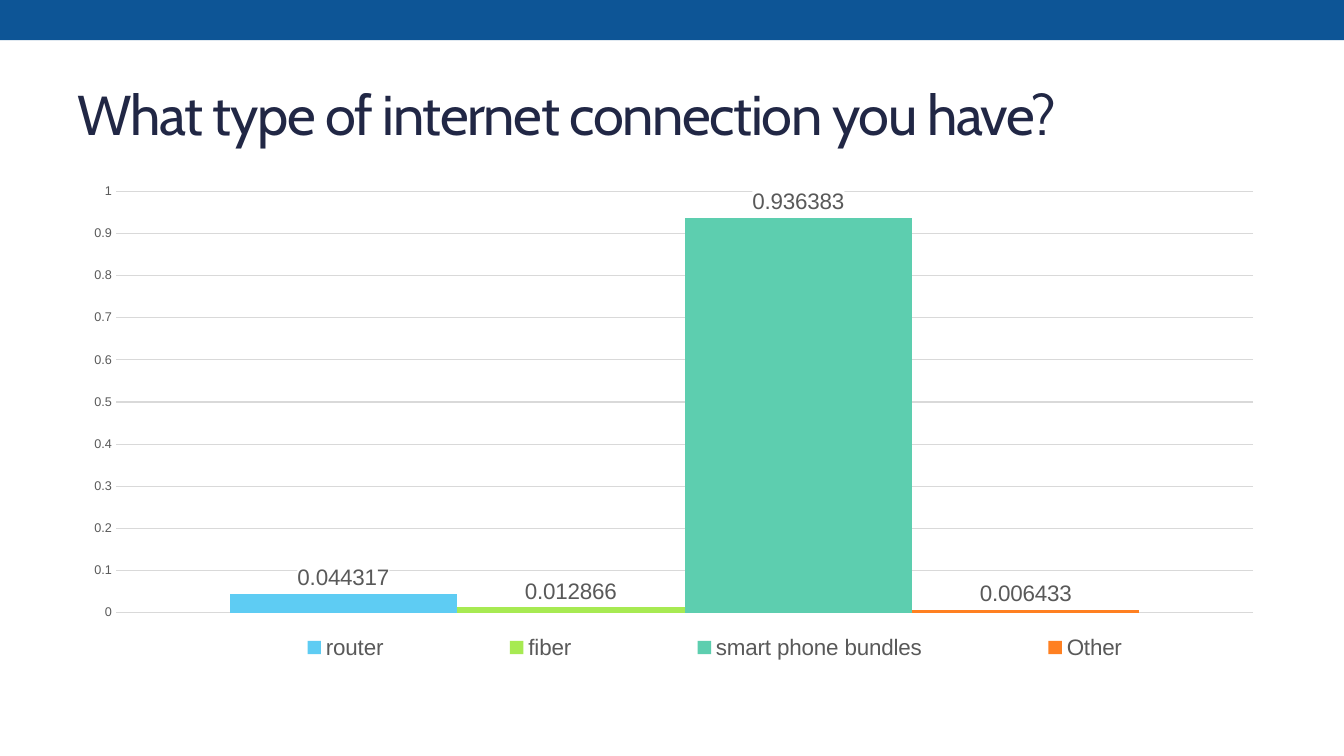
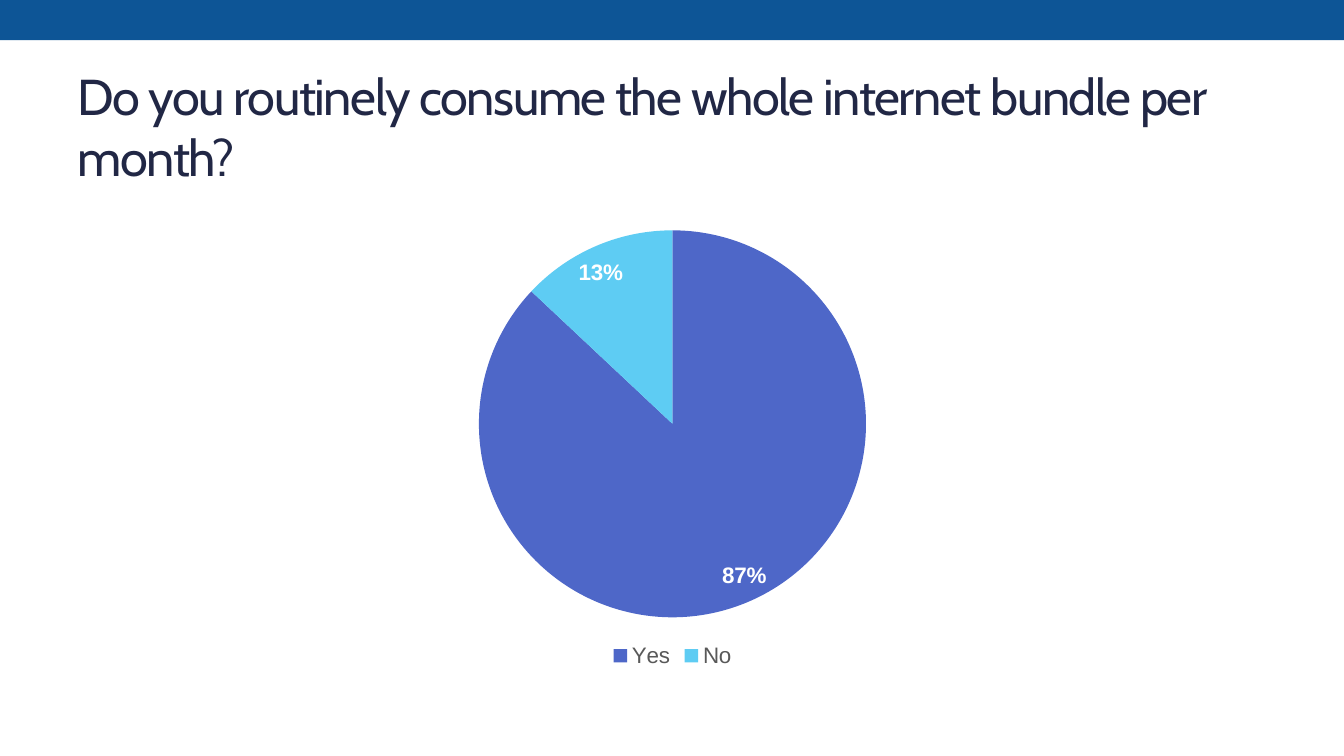
"""Builds two survey slides, one with a column chart and one with a pie chart."""
from typing import NamedTuple

from lxml import etree
from pptx import Presentation
from pptx.chart.data import CategoryChartData
from pptx.dml.color import RGBColor
from pptx.enum.chart import (XL_CHART_TYPE, XL_LABEL_POSITION,
                             XL_LEGEND_POSITION, XL_TICK_MARK)
from pptx.enum.shapes import MSO_SHAPE
from pptx.enum.text import MSO_ANCHOR
from pptx.oxml import parse_xml
from pptx.oxml.ns import nsdecls, qn
from pptx.util import Inches, Pt

COLUMN, PIE = XL_CHART_TYPE.COLUMN_CLUSTERED, XL_CHART_TYPE.PIE
ABOVE, BEST = XL_LABEL_POSITION.OUTSIDE_END, XL_LABEL_POSITION.BEST_FIT
BOTTOM = XL_LEGEND_POSITION.BOTTOM
NO_TICK = XL_TICK_MARK.NONE
RECT = MSO_SHAPE.RECTANGLE
MIDDLE = MSO_ANCHOR.MIDDLE

COLORS = {
    "band": "0D5596", "title": "212745", "text": "595959", "grid": "D9D9D9",
    "white": "FFFFFF", "sky": "5ECCF3", "lime": "A7EA52", "mint": "5DCEAF",
    "orange": "FF8021", "indigo": "4E67C8",
}
HEAD, BODY = "Cabin", "Arial"
WIDTH, LEFT, SPAN, TOP = 13.33, 0.67, 12, 0.58


class Item(NamedTuple):
    name: str
    value: float
    color: str


class Area(NamedTuple):
    x: float
    y: float
    w: float
    h: float


LINKS = [
    Item("router", 0.044317, "sky"),
    Item("fiber", 0.012866, "lime"),
    Item("smart phone bundles", 0.936383, "mint"),
    Item("Other", 0.006433, "orange"),
]
USAGE = [Item("Yes", 0.87, "indigo"), Item("No", 0.13, "sky")]


def rgb(name: str) -> RGBColor:
    return RGBColor.from_string(COLORS[name])


def paint(fill, color: str) -> None:
    fill.solid()
    fill.fore_color.rgb = rgb(color)


def style(font, size: float, color: str, face: str = BODY,
          bold: bool = False) -> None:
    font.name, font.size, font.bold = face, Pt(size), bold
    font.color.rgb = rgb(color)


def write(slide, text: str, *, area: Area, size: float, color: str,
          face: str, track: int = 0) -> None:
    box = slide.shapes.add_textbox(*map(Inches, area))
    frame = box.text_frame
    frame.word_wrap = True
    frame.vertical_anchor = MIDDLE
    run = frame.paragraphs[0].add_run()
    run.text = text
    style(run.font, size, color, face)
    run.font._element.set("spc", str(track))


def start(deck, title: str, size: float, height: float):
    slide = deck.slides.add_slide(deck.slide_layouts[6])
    band = slide.shapes.add_shape(RECT, 0, 0, Inches(WIDTH), Inches(0.4))
    band.shadow.inherit = False
    paint(band.fill, "band")
    band.line.fill.background()
    write(slide, title, area=Area(LEFT, TOP, SPAN, height), size=size,
          color="title", face=HEAD, track=-100)
    return slide


def place(node, area: Area, inner: bool = False) -> None:
    for old in node.findall(qn("c:layout")):
        node.remove(old)
    layout = etree.Element(qn("c:layout"))
    manual = etree.SubElement(layout, qn("c:manualLayout"))
    parts = [("layoutTarget", "inner")] if inner else []
    parts += [("xMode", "edge"), ("yMode", "edge")]
    parts += [(key, str(val)) for key, val in area._asdict().items()]
    for tag, val in parts:
        etree.SubElement(manual, qn(f"c:{tag}")).set("val", val)
    node.insert(0 if inner else 1, layout)


def add_chart(slide, kind, data, area: Area, plot: Area):
    chart = slide.shapes.add_chart(kind, *map(Inches, area), data).chart
    chart.has_title = False
    chart.font.name, chart.font.size = BODY, Pt(10)
    chart.has_legend = True
    chart.legend.position = BOTTOM
    chart.legend.include_in_layout = False
    style(chart.legend.font, 16, "text")
    place(chart.element.find(".//" + qn("c:plotArea")), plot, inner=True)
    return chart


def label(series, form: str, color: str, spot, bold: bool = False):
    labels = series.data_labels
    labels.show_value = True
    labels.number_format, labels.number_format_is_linked = form, False
    labels.position = spot
    style(labels.font, 16, color, bold=bold)
    return labels


def add_columns(slide, items: list[Item]) -> None:
    data = CategoryChartData()
    data.categories = ["Column1"]
    for item in items:
        data.add_series(item.name, [item.value])
    chart = add_chart(slide, COLUMN, data, Area(LEFT, 1.75, SPAN, 4.92),
                      Area(0.04, 0.03, 0.94, 0.85))
    place(chart.element.find(".//" + qn("c:legend")),
          Area(0.1, 0.9, 0.87, 0.1))
    chart.category_axis.visible = False
    axis = chart.value_axis
    axis.minimum_scale, axis.maximum_scale, axis.major_unit = 0, 1, 0.1
    axis.major_tick_mark = NO_TICK
    axis.tick_labels.number_format = "General"
    axis.tick_labels.number_format_is_linked = False
    style(axis.tick_labels.font, 9, "text")
    axis.format.line.fill.background()
    grid = axis.major_gridlines.format.line
    grid.color.rgb, grid.width = rgb("grid"), Pt(0.75)
    plot = chart.plots[0]
    plot.gap_width, plot.overlap, plot.vary_by_categories = 100, 0, False
    for series, item in zip(plot.series, items):
        paint(series.format.fill, item.color)
        labels = label(series, "0.000000", "text", ABOVE)
        back = parse_xml(
            f'<c:spPr {nsdecls("c", "a")}><a:solidFill>'
            f'<a:srgbClr val="{COLORS["white"]}"/></a:solidFill></c:spPr>')
        labels._element.find(qn("c:numFmt")).addnext(back)


def add_pie(slide, items: list[Item]) -> None:
    data = CategoryChartData()
    data.categories = [item.name for item in items]
    data.add_series("Series 1", [item.value for item in items])
    chart = add_chart(slide, PIE, data, Area(LEFT, 1.93, SPAN, 4.74),
                      Area(0.34, 0.075, 0.32, 0.81))
    plot = chart.plots[0]
    plot.vary_by_categories = True
    series = plot.series[0]
    for spot, item in enumerate(items):
        paint(series.points[spot].format.fill, item.color)
    label(series, "0%", "white", BEST, bold=True)


def main() -> None:
    deck = Presentation()
    deck.slide_width, deck.slide_height = Inches(WIDTH), Inches(7.5)
    add_columns(start(deck, "What type of internet connection you have?",
                      40, 1.08), LINKS)
    add_pie(start(deck, "Do you routinely consume the whole internet bundle "
                  "per month?", 36, 1.34), USAGE)
    deck.save("out.pptx")


if __name__ == "__main__":
    main()
